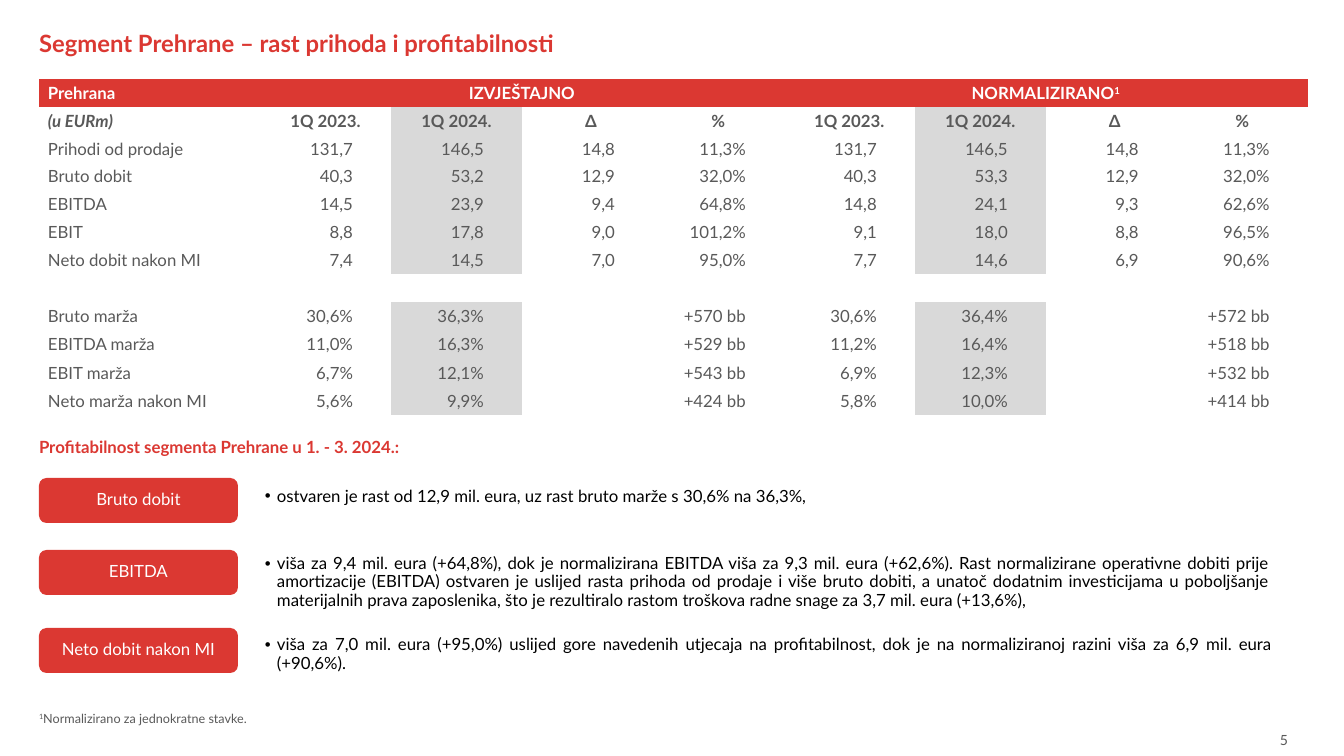
"""Build the food segment results slide with its table and profitability notes."""
from dataclasses import dataclass
from typing import Any

from pptx import Presentation
from pptx.dml.color import RGBColor
from pptx.enum.shapes import MSO_SHAPE
from pptx.enum.text import MSO_ANCHOR, MSO_AUTO_SIZE, PP_ALIGN
from pptx.oxml import parse_xml
from pptx.oxml.ns import nsdecls, qn
from pptx.util import Emu, Pt

LEFT, CENTER, RIGHT, JUSTIFY = PP_ALIGN.LEFT, PP_ALIGN.CENTER, PP_ALIGN.RIGHT, PP_ALIGN.JUSTIFY
TOP, MIDDLE = MSO_ANCHOR.TOP, MSO_ANCHOR.MIDDLE
NO_AUTOSIZE = MSO_AUTO_SIZE.NONE
ROUNDED = MSO_SHAPE.ROUNDED_RECTANGLE

FONT = "Lato"
EMU_PER_PX = 914400 / 100.8
COLORS = {"red": "DB3832", "gray": "595959", "band": "D9D9D9", "white": "FFFFFF", "black": "000000"}
NO_STYLE = "{2D5ABB26-0587-4C30-8999-92F81FD0307C}"
COMPARISON_LAYOUT = 4
EDGE = 39
LABEL_WIDTH, VALUE_WIDTH = 221, 131
HIGHLIGHTED = (2, 6)
DELTAS = (3, 7)

PERIODS = ("1Q 2023.", "1Q 2024.", "Δ", "%")
ROWS = (
    ("Prehrana", "IZVJEŠTAJNO", "", "", "", "NORMALIZIRANO^1", "", "", ""),
    ("(u EURm)", *PERIODS, *PERIODS),
    ("Prihodi od prodaje", "131,7", "146,5", "14,8", "11,3%", "131,7", "146,5", "14,8", "11,3%"),
    ("Bruto dobit", "40,3", "53,2", "12,9", "32,0%", "40,3", "53,3", "12,9", "32,0%"),
    ("EBITDA", "14,5", "23,9", "9,4", "64,8%", "14,8", "24,1", "9,3", "62,6%"),
    ("EBIT", "8,8", "17,8", "9,0", "101,2%", "9,1", "18,0", "8,8", "96,5%"),
    ("Neto dobit nakon MI", "7,4", "14,5", "7,0", "95,0%", "7,7", "14,6", "6,9", "90,6%"),
    ("",) * 9,
    ("Bruto marža", "30,6%", "36,3%", "", "+570 bb", "30,6%", "36,4%", "", "+572 bb"),
    ("EBITDA marža", "11,0%", "16,3%", "", "+529 bb", "11,2%", "16,4%", "", "+518 bb"),
    ("EBIT marža", "6,7%", "12,1%", "", "+543 bb", "6,9%", "12,3%", "", "+532 bb"),
    ("Neto marža nakon MI", "5,6%", "9,9%", "", "+424 bb", "5,8%", "10,0%", "", "+414 bb"),
)


@dataclass(frozen=True)
class Box:
    """A rectangle in px."""
    left: int
    top: int
    width: int
    height: int


@dataclass(frozen=True)
class Note:
    """A red label with its explanation."""
    label: str
    label_top: int
    text: str
    area: Box
    insets: tuple[int, int]
    align: Any


NOTES = (
    Note("Bruto dobit", 478,
         "ostvaren je rast od 12,9 mil. eura, uz rast bruto marže s 30,6% na 36,3%,",
         Box(238, 477, 1063, 40), (0, 0), LEFT),
    Note("EBITDA", 550,
         "viša za 9,4 mil. eura (+64,8%), dok je normalizirana EBITDA viša za 9,3 mil. eura (+62,6%). "
         "Rast normalizirane operativne dobiti prije amortizacije (EBITDA) ostvaren je uslijed rasta "
         "prihoda od prodaje i više bruto dobiti, a unatoč dodatnim investicijama u poboljšanje "
         "materijalnih prava zaposlenika, što je rezultiralo rastom troškova radne snage za "
         "3,7 mil. eura (+13,6%),",
         Box(238, 526, 1059, 106), (21, 14), JUSTIFY),
    Note("Neto dobit nakon MI", 628,
         "viša za 7,0 mil. eura (+95,0%) uslijed gore navedenih utjecaja na profitabilnost, dok je na "
         "normaliziranoj razini viša za 6,9 mil. eura (+90,6%).",
         Box(238, 630, 1062, 65), (0, 16), JUSTIFY),
)


def px(length: int) -> Emu:
    """Turn px into EMU."""
    return Emu(round(length * EMU_PER_PX))


def apply(target: Any, values: dict[str, Any]) -> None:
    """Set every format value on the target."""
    for name, value in values.items():
        setattr(target, name, value)


def margins(left: int, top: int, right: int, bottom: int) -> dict[str, Emu]:
    """Give the margin settings of a text frame or cell."""
    sides = ("left", "top", "right", "bottom")
    return {f"margin_{side}": px(size) for side, size in zip(sides, (left, top, right, bottom))}


def edges(box: Box) -> dict[str, Emu]:
    """Give the position settings of a shape."""
    return {name: px(getattr(box, name)) for name in ("left", "top", "width", "height")}


def write(frame: Any, text: str, color: str, size: int = 12, bold: bool = False, italic: bool = False,
          align: Any = LEFT, spacing: float = 1.0, bullet: bool = False) -> None:
    """Write one paragraph, raising every second part between carets."""
    paragraph = frame.paragraphs[0]
    if bullet:
        properties = paragraph._p.get_or_add_pPr()
        properties.set("marL", str(px(12)))
        properties.set("indent", str(-px(12)))
        properties.append(parse_xml(f'<a:buFont {nsdecls("a")} typeface="Arial"/>'))
        properties.append(parse_xml(f'<a:buChar {nsdecls("a")} char="•"/>'))
    apply(paragraph, {"alignment": align, "line_spacing": spacing,
                      "space_before": Pt(0), "space_after": Pt(0)})
    for index, part in enumerate(text.split("^")):
        if text and not part:
            continue
        run = paragraph.add_run()
        run.text = part
        apply(run.font, {"name": FONT, "size": Pt(size), "bold": bold, "italic": italic})
        run.font.color.rgb = RGBColor.from_string(COLORS[color])
        if index % 2:
            run._r.get_or_add_rPr().set("baseline", "30000")


def place_text(shape: Any, box: Box, insets: tuple[int, int, int, int], anchor: Any,
               text: str, color: str, **style: Any) -> None:
    """Move a text shape and fill it."""
    apply(shape, edges(box))
    apply(shape.text_frame, {"word_wrap": True, "auto_size": NO_AUTOSIZE,
                             "vertical_anchor": anchor, **margins(*insets)})
    write(shape.text_frame, text, color, **style)


def add_text(slide: Any, box: Box, insets: tuple[int, int, int, int], text: str, size: int) -> None:
    """Add a gray text box."""
    shape = slide.shapes.add_textbox(0, 0, 0, 0)
    place_text(shape, box, insets, TOP, text, "gray", size=size)


def add_results(slide: Any) -> None:
    """Add the table of results."""
    columns = len(ROWS[0])
    area = Box(EDGE, 79, LABEL_WIDTH + VALUE_WIDTH * (columns - 1), 334)
    frame = slide.shapes.add_table(len(ROWS), columns, *edges(area).values())
    frame.element.find(".//" + qn("a:tableStyleId")).text = NO_STYLE
    table = frame.table
    apply(table, {"first_row": False, "horz_banding": False})
    for index, column in enumerate(table.columns):
        column.width = px(VALUE_WIDTH if index else LABEL_WIDTH)
    for first in (1, 5):
        table.cell(0, first).merge(table.cell(0, first + 3))
    for row, texts in enumerate(ROWS):
        for column, text in enumerate(texts):
            cell = table.cell(row, column)
            heading = row < 2
            if column == 0:
                align, insets = LEFT, margins(9, 0, 0, 0)
            elif heading:
                shift = 7 if row == 1 and column in DELTAS else 0
                align, insets = CENTER, margins(shift, 0, 0, 0)
            else:
                align, insets = RIGHT, margins(24, 0, 38, 0)
            apply(cell, {"vertical_anchor": MIDDLE, **insets})
            if row == 0 or (column in HIGHLIGHTED and any(texts)):
                cell.fill.solid()
                cell.fill.fore_color.rgb = RGBColor.from_string(COLORS["band" if row else "red"])
            else:
                cell.fill.background()
            write(cell.text_frame, text, "gray" if row else "white", bold=heading,
                  italic=row == 1 and column == 0, align=align)


def add_note(slide: Any, note: Note, body: Any) -> None:
    """Add a red label and put its explanation in a body placeholder."""
    label = slide.shapes.add_shape(ROUNDED, 0, 0, 0, 0)
    label.shadow.inherit = False
    label.fill.solid()
    label.fill.fore_color.rgb = RGBColor.from_string(COLORS["red"])
    label.line.fill.background()
    place_text(label, Box(EDGE, note.label_top, 199, 45), (5, 3, 5, 3), MIDDLE,
               note.label, "white", align=CENTER, spacing=0.9)
    top, bottom = note.insets
    place_text(body, note.area, (27, top, 27, bottom), MIDDLE,
               note.text, "black", align=note.align, spacing=0.9, bullet=True)


def main() -> None:
    """Build and save the slide."""
    deck = Presentation()
    apply(deck, {"slide_width": px(1344), "slide_height": px(756)})
    slide = deck.slides.add_slide(deck.slide_layouts[COMPARISON_LAYOUT])
    title, subheading, *bodies = slide.placeholders
    place_text(title, Box(EDGE, 20, 1271, 45), (0, 5, 10, 5), MIDDLE,
               "Segment Prehrane – rast prihoda i profitabilnosti", "red", size=17, bold=True)
    add_results(slide)
    place_text(subheading, Box(EDGE, 427, 1271, 27), (0, 0, 0, 0), TOP,
               "Profitabilnost segmenta Prehrane u 1. - 3. 2024.:", "red",
               bold=True, align=JUSTIFY, spacing=1.5)
    for note, body in zip(NOTES, bodies):
        add_note(slide, note, body)
    add_text(slide, Box(EDGE, 711, 852, 30), (0, 0, 0, 0), "^1^Normalizirano za jednokratne stavke.", 9)
    add_text(slide, Box(1270, 727, 74, 29), (10, 5, 10, 5), "5", 10)
    deck.save("out.pptx")


if __name__ == "__main__":
    main()
